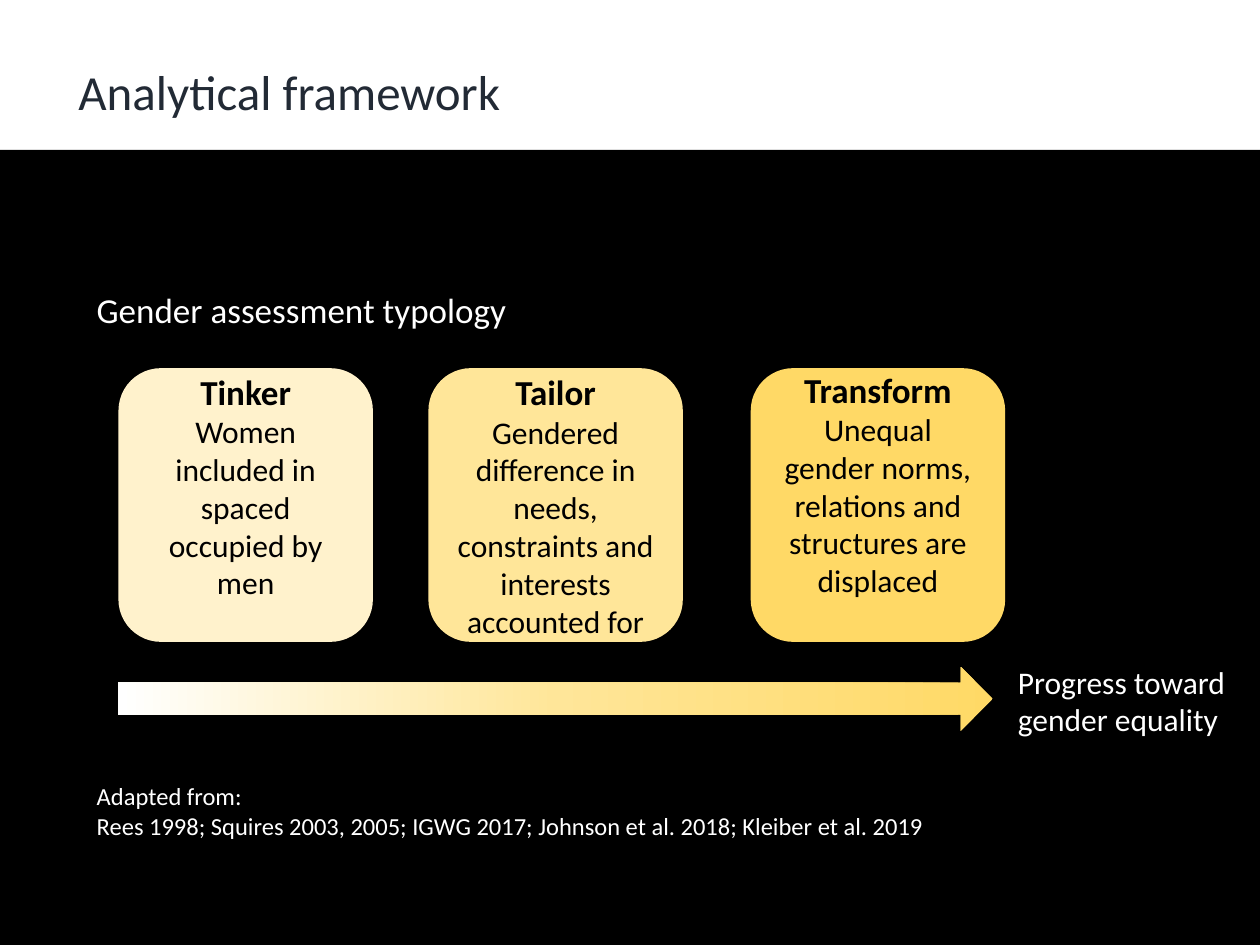
"""Build the analytical framework slide with the gender assessment typology."""
from copy import deepcopy

from pptx import Presentation
from pptx.dml.color import RGBColor
from pptx.enum.shapes import MSO_SHAPE
from pptx.enum.text import MSO_ANCHOR, MSO_AUTO_SIZE, PP_ALIGN
from pptx.oxml.ns import qn
from pptx.util import Pt

RECTANGLE = MSO_SHAPE.RECTANGLE
ROUNDED = MSO_SHAPE.ROUNDED_RECTANGLE
RIGHT_ARROW = MSO_SHAPE.RIGHT_ARROW
MIDDLE = MSO_ANCHOR.MIDDLE
LEFT, CENTER = PP_ALIGN.LEFT, PP_ALIGN.CENTER
COLORS = {
    "black": "000000",
    "white": "FFFFFF",
    "title": "222A35",
    "tinker": "FFF2CC",
    "tailor": "FFE699",
    "transform": "FFD966",
}


def write(frame, lines, color, align=LEFT):
    frame.word_wrap = True
    for index, (text, size, bold) in enumerate(lines):
        paragraph = frame.add_paragraph() if index else frame.paragraphs[0]
        paragraph.alignment = align
        run = paragraph.add_run()
        run.text = text
        run.font.name = "Calibri"
        run.font.size = Pt(size)
        run.font.bold = bold
        run.font.color.rgb = RGBColor.from_string(COLORS[color])


def add_block(kind, left, top, width, height, color):
    block = slide.shapes.add_shape(kind, Pt(left), Pt(top), Pt(width), Pt(height))
    block.shadow.inherit = False
    block.fill.solid()
    block.fill.fore_color.rgb = RGBColor.from_string(COLORS[color])
    block.line.fill.background()
    return block


prs = Presentation()
prs.slide_width, prs.slide_height = Pt(720), Pt(540)
slide = prs.slides.add_slide(prs.slide_layouts[5])

add_block(RECTANGLE, 0, 85.7, 720, 454.3, "black")

heading = slide.shapes.title
heading.left, heading.top, heading.width, heading.height = Pt(37.6), Pt(17.4), Pt(620.6), Pt(104.4)
heading.text_frame.auto_size = MSO_AUTO_SIZE.NONE
heading.text_frame.vertical_anchor = MIDDLE
heading.text_frame.margin_bottom = Pt(34.4)
write(heading.text_frame, [("Analytical framework", 28, False)], "title")
heading.text_frame.paragraphs[0].line_spacing = 0.9

captions = [
    (48.2, 161.3, 614.2, 31.5, 20, ["Gender assessment typology"]),
    (48.2, 442.8, 579.6, 41.2, 14, [
        "Adapted from:",
        "Rees 1998; Squires 2003, 2005; IGWG 2017; Johnson et al. 2018; Kleiber et al. 2019",
    ]),
    (574.6, 375.1, 141.8, 50.9, 18, ["Progress toward gender equality"]),
]
for left, top, width, height, size, texts in captions:
    caption = slide.shapes.add_textbox(Pt(left), Pt(top), Pt(width), Pt(height))
    write(caption.text_frame, [(text, size, False) for text in texts], "white")

stages = [
    (67.7, "Tinker", "Women included in spaced occupied by men", 25.6),
    (244.8, "Tailor", "Gendered difference in needs, constraints and interests accounted for", 3.6),
    (429, "Transform", "Unequal gender norms, relations and structures are displaced", 28),
]
for left, stage, meaning, bottom_inset in stages:
    card = add_block(ROUNDED, left, 210.4, 145.4, 156.4, stage.lower())
    card.text_frame.vertical_anchor = MIDDLE
    card.text_frame.margin_bottom = Pt(bottom_inset)
    write(card.text_frame, [(stage, 20, True), (meaning, 18, False)], "black", CENTER)

progress = add_block(RIGHT_ARROW, 67.7, 380.9, 499.7, 36.7, "transform")
progress.fill.gradient()
progress.fill.gradient_angle = 180
stop_list = progress.element.spPr.find(qn("a:gradFill")).find(qn("a:gsLst"))
stop_list.insert(1, deepcopy(stop_list[0]))
for stop, position, color in zip(
    progress.fill.gradient_stops, (0, 0.5, 1), ("transform", "tailor", "white")
):
    stop.position = position
    stop.color.rgb = RGBColor.from_string(COLORS[color])

prs.save("out.pptx")
